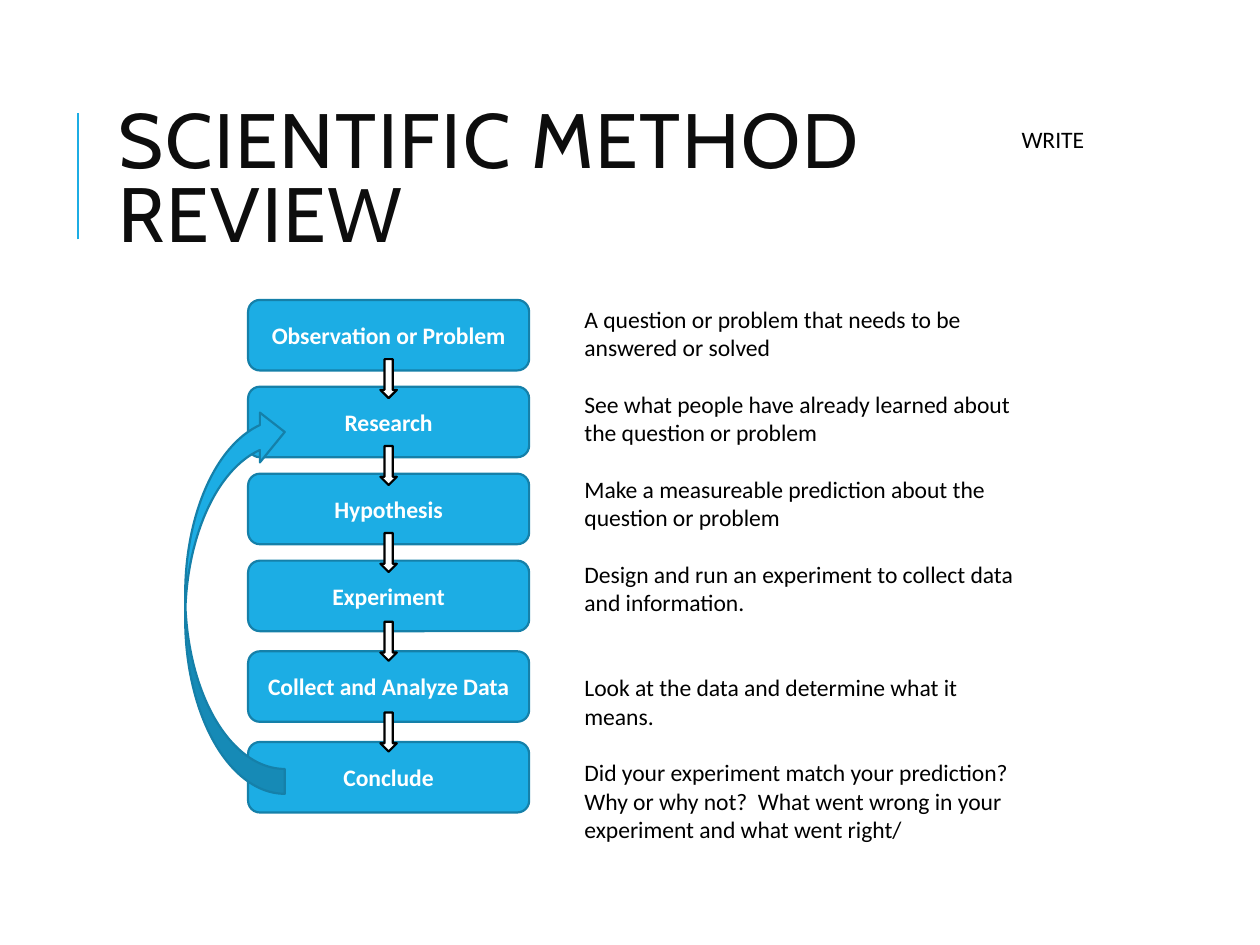
from dataclasses import dataclass

from lxml import etree
from pptx import Presentation
from pptx import util as u
from pptx.dml.color import RGBColor
from pptx.enum import shapes, text
from pptx.oxml import ns


@dataclass(frozen=True)
class Theme:
    accent: str = "1CADE4"
    accent_dark: str = "1580A9"
    ink: str = "000000"
    title_ink: str = "0D0D0D"
    paper: str = "FFFFFF"
    title_font: str = "Cabin"
    body_font: str = "Calibri"
    title_size: float = 44
    body_size: float = 13.5
    outline: float = 1.25
    rule: float = 1.5


def apply(target, values):
    for name, value in values.items():
        setattr(target, name, value)


class Painter:
    """Holds the theme and the current slide; all lengths are points."""

    def __init__(self, theme, page):
        self.theme = theme
        self.page = page

    def add_span(self, para, words, color, **font):
        span = para.add_run()
        span.text = words
        values = {"name": self.theme.body_font, "size": u.Pt(self.theme.body_size)}
        apply(span.font, values | font)
        span.font.color.rgb = RGBColor.from_string(color)
        return span

    def title(self, words, left, top, width, height):
        box = self.page.shapes.title
        apply(box, {"left": u.Pt(left), "top": u.Pt(top),
                    "width": u.Pt(width), "height": u.Pt(height)})
        apply(box.text_frame, {"word_wrap": True,
                               "auto_size": text.MSO_AUTO_SIZE.NONE,
                               "vertical_anchor": text.MSO_ANCHOR.MIDDLE})
        para = box.text_frame.paragraphs[0]
        apply(para, {"alignment": text.PP_ALIGN.LEFT, "line_spacing": 0.8})
        span = self.add_span(para, words, self.theme.title_ink,
                             name=self.theme.title_font,
                             size=u.Pt(self.theme.title_size))
        # Letter spacing in hundredths of a point
        span.font._element.set("spc", "100")

    def line(self, x1, y1, x2, y2):
        line = self.page.shapes.add_connector(
            shapes.MSO_CONNECTOR.STRAIGHT, u.Pt(x1), u.Pt(y1), u.Pt(x2), u.Pt(y2))
        line.line.width = u.Pt(self.theme.rule)
        line.line.color.rgb = RGBColor.from_string(self.theme.accent)
        etree.SubElement(line._element.spPr, ns.qn("a:effectLst"))

    def shape(self, kind, left, top, width, height, fill, outline, words=""):
        shape = self.page.shapes.add_shape(
            kind, u.Pt(left), u.Pt(top), u.Pt(width), u.Pt(height))
        shape.shadow.inherit = False
        shape.fill.solid()
        shape.fill.fore_color.rgb = RGBColor.from_string(fill)
        shape.line.width = u.Pt(self.theme.outline)
        shape.line.color.rgb = RGBColor.from_string(outline)
        if words:
            shape.text_frame.vertical_anchor = text.MSO_ANCHOR.MIDDLE
            para = shape.text_frame.paragraphs[0]
            para.alignment = text.PP_ALIGN.CENTER
            self.add_span(para, words, self.theme.paper, bold=True)
        return shape

    def text_box(self, left, top, width, height, entries):
        """Each entry is a text and the space after it."""
        box = self.page.shapes.add_textbox(
            u.Pt(left), u.Pt(top), u.Pt(width), u.Pt(height))
        frame = box.text_frame
        frame.word_wrap = True
        for index, (words, gap) in enumerate(entries):
            para = frame.add_paragraph() if index else frame.paragraphs[0]
            para.space_after = u.Pt(gap)
            self.add_span(para, words, self.theme.ink)


LINE = 16.2  # height of one line of body text

# Step, top of its box, explanation, space after the explanation
STEPS = [
    ("Observation or Problem", 171.4,
     "A question or problem that needs to be answered or solved", LINE),
    ("Research", 221,
     "See what people have already learned about the question or problem", LINE),
    ("Hypothesis", 270.7,
     "Make a measureable prediction about the question or problem", LINE),
    ("Experiment", 320.4,
     "Design and run an experiment to collect data and information.", 2 * LINE),
    ("Collect and Analyze Data", 372.2,
     "Look at the data and determine what it means.", LINE),
    ("Conclude", 424,
     "Did your experiment match your prediction?  Why or why not?  "
     "What went wrong in your experiment and what went right/", 0),
]
STEP_LEFT, STEP_WIDTH, STEP_HEIGHT = 141.8, 160.6, 40.3
ARROW_WIDTH, ARROW_HEIGHT = 9.4, 22.3


def main():
    theme = Theme()
    deck = Presentation()
    apply(deck, {"slide_width": u.Pt(720), "slide_height": u.Pt(540)})
    page = deck.slides.add_slide(deck.slide_layouts[5])
    painter = Painter(theme, page)
    kinds = shapes.MSO_SHAPE

    # Title with its side rule
    painter.line(44.6, 136.8, 44.6, 64.8)
    painter.title("SCIENTIFIC METHOD REVIEW", 60.5, 46, 573.8, 118)

    # Step boxes
    for name, top, _, _ in STEPS:
        painter.shape(kinds.ROUNDED_RECTANGLE, STEP_LEFT, top, STEP_WIDTH,
                      STEP_HEIGHT, theme.accent, theme.accent_dark, name)

    # Down arrows, centred on the gaps between boxes
    arrow_left = STEP_LEFT + (STEP_WIDTH - ARROW_WIDTH) / 2
    for (_, upper, _, _), (_, lower, _, _) in zip(STEPS, STEPS[1:]):
        middle = (upper + STEP_HEIGHT + lower) / 2
        painter.shape(kinds.DOWN_ARROW, arrow_left, middle - ARROW_HEIGHT / 2,
                      ARROW_WIDTH, ARROW_HEIGHT, theme.paper, theme.ink)

    # Loop from the conclusion back to research
    loop = painter.shape(kinds.CURVED_LEFT_ARROW, 105.8, 232.6, 56.9, 221,
                         theme.accent, theme.accent_dark)
    loop.rotation = 180

    # Note and explanations
    painter.text_box(576.7, 67.7, 122.4, 23.8, [("WRITE", 0)])
    painter.text_box(326.9, 170.6, 262.8, 334,
                     [(words, gap) for _, _, words, gap in STEPS])

    deck.save("out.pptx")


if __name__ == "__main__":
    main()
